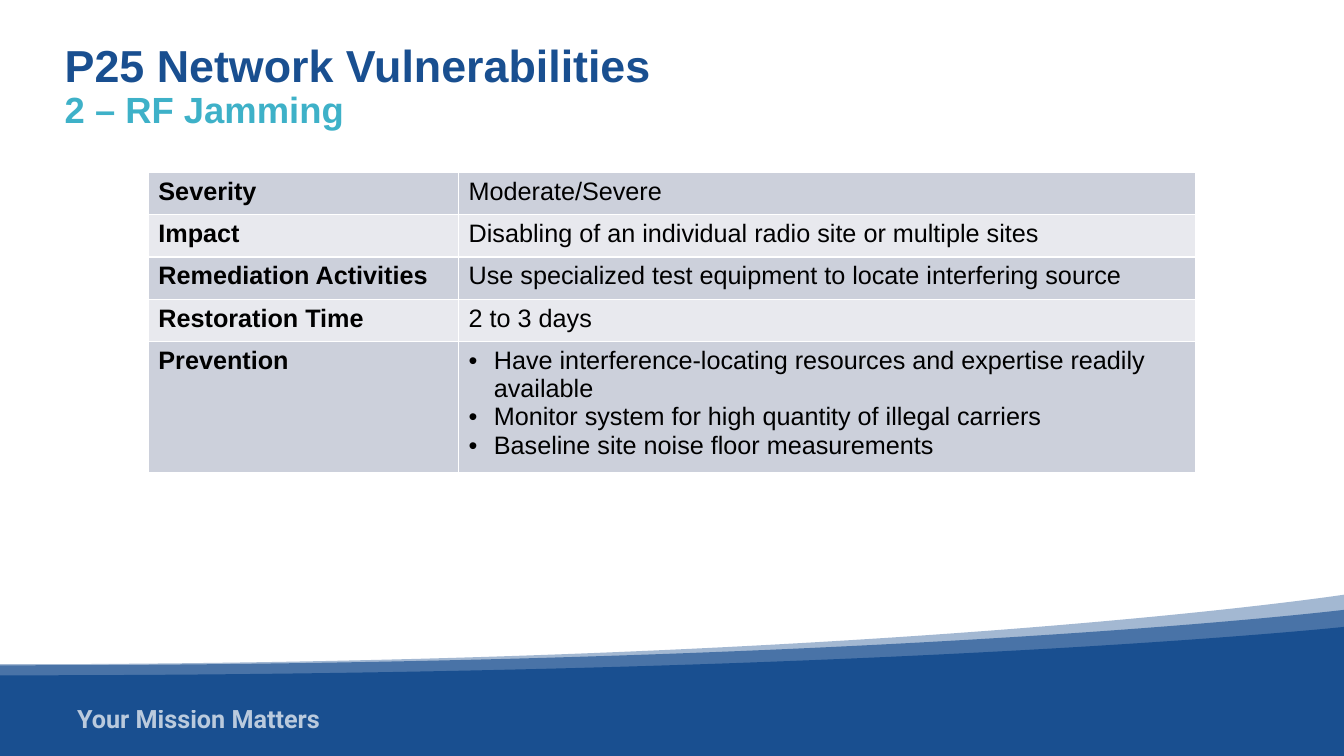
from copy import deepcopy

from lxml import etree
from pptx import Presentation
from pptx import util as u
from pptx.dml.color import RGBColor
from pptx.enum import text
from pptx.oxml import ns

Pt = u.Pt
WIDTH, HEIGHT = 960, 540
COLORS = {"navy": "194F90", "teal": "3EB1C8", "white": "FFFFFF",
          "black": "000000", "band dark": "CCD0DB", "band light": "E8E9EE"}

# Right edge height, left edge height, opacity in percent
WAVES = [(424.8, 474.5, 40), (435.6, 475.2, 65), (447.8, 482.4, 100)]
WAVE_BEND_X = 634

ROWS = [
    ("Severity", ["Moderate/Severe"]),
    ("Impact", ["Disabling of an individual radio site or multiple sites"]),
    ("Remediation Activities",
     ["Use specialized test equipment to locate interfering source"]),
    ("Restoration Time", ["2 to 3 days"]),
    ("Prevention",
     ["Have interference-locating resources and expertise readily available",
      "Monitor system for high quantity of illegal carriers",
      "Baseline site noise floor measurements"]),
]


def color(name):
    return RGBColor.from_string(COLORS[name])


def set_opacity(element, percent):
    for value in element.iter(ns.qn("a:srgbClr")):
        etree.SubElement(value, ns.qn("a:alpha"), val=str(percent * 1000))


def write(paragraph, words, size=18, font="Arial", fill="black", bold=False,
          bullet=False, spacing=None, opacity=100):
    """Fill one paragraph with one formatted run."""
    if bullet:
        properties = paragraph._p.get_or_add_pPr()
        properties.set("marL", str(Pt(18)))
        properties.set("indent", str(-Pt(18)))
        etree.SubElement(properties, ns.qn("a:buFont"), typeface="Arial")
        etree.SubElement(properties, ns.qn("a:buChar"), char="•")
    paragraph.alignment = text.PP_ALIGN.LEFT
    if spacing:
        paragraph.line_spacing = spacing
    run = paragraph.add_run()
    run.text = words
    run.font.size, run.font.name, run.font.bold = Pt(size), font, bold
    run.font.color.rgb = color(fill)
    if opacity < 100:
        set_opacity(run._r, opacity)


def bend_top_edge(wave, bend_x):
    """Turn the first straight segment of an outline into a curve."""
    outline = wave._element.spPr
    start = next(outline.iter(ns.qn("a:moveTo")))[0]
    edge = next(outline.iter(ns.qn("a:lnTo")))
    end = edge[0]
    bend = deepcopy(end)
    bend.set("x", str(bend_x))
    curve = etree.Element(ns.qn("a:cubicBezTo"))
    edge.getparent().replace(edge, curve)
    curve.extend([deepcopy(start), bend, end])


def add_waves(slide, left, right, bottom):
    """Layered curves that fill the foot of the slide."""
    for right_y, left_y, opacity in WAVES:
        builder = slide.shapes.build_freeform(Pt(right), Pt(right_y))
        builder.add_line_segments(
            [(Pt(left), Pt(left_y)), (Pt(left), Pt(bottom)),
             (Pt(right), Pt(bottom))], close=True)
        wave = builder.convert_to_shape()
        bend_top_edge(wave, Pt(WAVE_BEND_X - left))
        wave.shadow.inherit = False
        wave.fill.solid()
        wave.fill.fore_color.rgb = color("navy")
        wave.line.fill.background()
        if opacity < 100:
            set_opacity(wave._element.spPr, opacity)


def add_motto(slide, left, top, width, height):
    frame = slide.shapes.add_textbox(
        Pt(left), Pt(top), Pt(width), Pt(height)).text_frame
    frame.word_wrap = True
    write(frame.paragraphs[0], "Your Mission Matters", font="Roboto",
          fill="white", bold=True, opacity=70)


def add_title(slide, left, top, width, height):
    title = slide.shapes.title
    title.left, title.top = Pt(left), Pt(top)
    title.width, title.height = Pt(width), Pt(height)
    frame = title.text_frame
    frame.word_wrap = True
    frame.auto_size = text.MSO_AUTO_SIZE.NONE
    frame.vertical_anchor = text.MSO_ANCHOR.TOP
    write(frame.paragraphs[0], "P25 Network Vulnerabilities", size=32,
          fill="navy", bold=True, spacing=0.9)
    write(frame.add_paragraph(), "2 – RF Jamming", size=26,
          fill="teal", bold=True, spacing=0.9)


def format_cell(cell, fill):
    """White one-point borders around a solid fill."""
    properties = cell._tc.get_or_add_tcPr()
    for side in ("lnL", "lnR", "lnT", "lnB"):
        border = etree.SubElement(properties, ns.qn("a:" + side), w=str(Pt(1)))
        solid = etree.SubElement(border, ns.qn("a:solidFill"))
        etree.SubElement(solid, ns.qn("a:srgbClr"), val=COLORS["white"])
    cell.fill.solid()
    cell.fill.fore_color.rgb = color(fill)


def add_details(slide, left, top, width, row_height):
    """Table of labels and details; the last row grows with its list."""
    label_width = 221.6
    table = slide.shapes.add_table(
        len(ROWS), 2, Pt(left), Pt(top), Pt(width),
        Pt(row_height * len(ROWS))).table
    table.first_row = False
    table.columns[0].width = Pt(label_width)
    table.columns[1].width = Pt(width - label_width)
    for index, (label, details) in enumerate(ROWS):
        for cell in table.rows[index].cells:
            format_cell(cell, "band light" if index % 2 else "band dark")
        write(table.cell(index, 0).text_frame.paragraphs[0], label, bold=True)
        frame = table.cell(index, 1).text_frame
        for number, detail in enumerate(details):
            paragraph = frame.add_paragraph() if number else frame.paragraphs[0]
            write(paragraph, detail, bullet=len(details) > 1)


def main():
    presentation = Presentation()
    presentation.slide_width, presentation.slide_height = Pt(WIDTH), Pt(HEIGHT)
    slide = presentation.slides.add_slide(presentation.slide_layouts[5])
    add_waves(slide, 0, WIDTH, HEIGHT)
    add_motto(slide, 48, 499, 280, 29.5)
    add_title(slide, 39, 27.4, 865.8, 37.4)
    add_details(slide, 106, 123.2, 748, 30.2)
    presentation.save("out.pptx")


if __name__ == "__main__":
    main()
